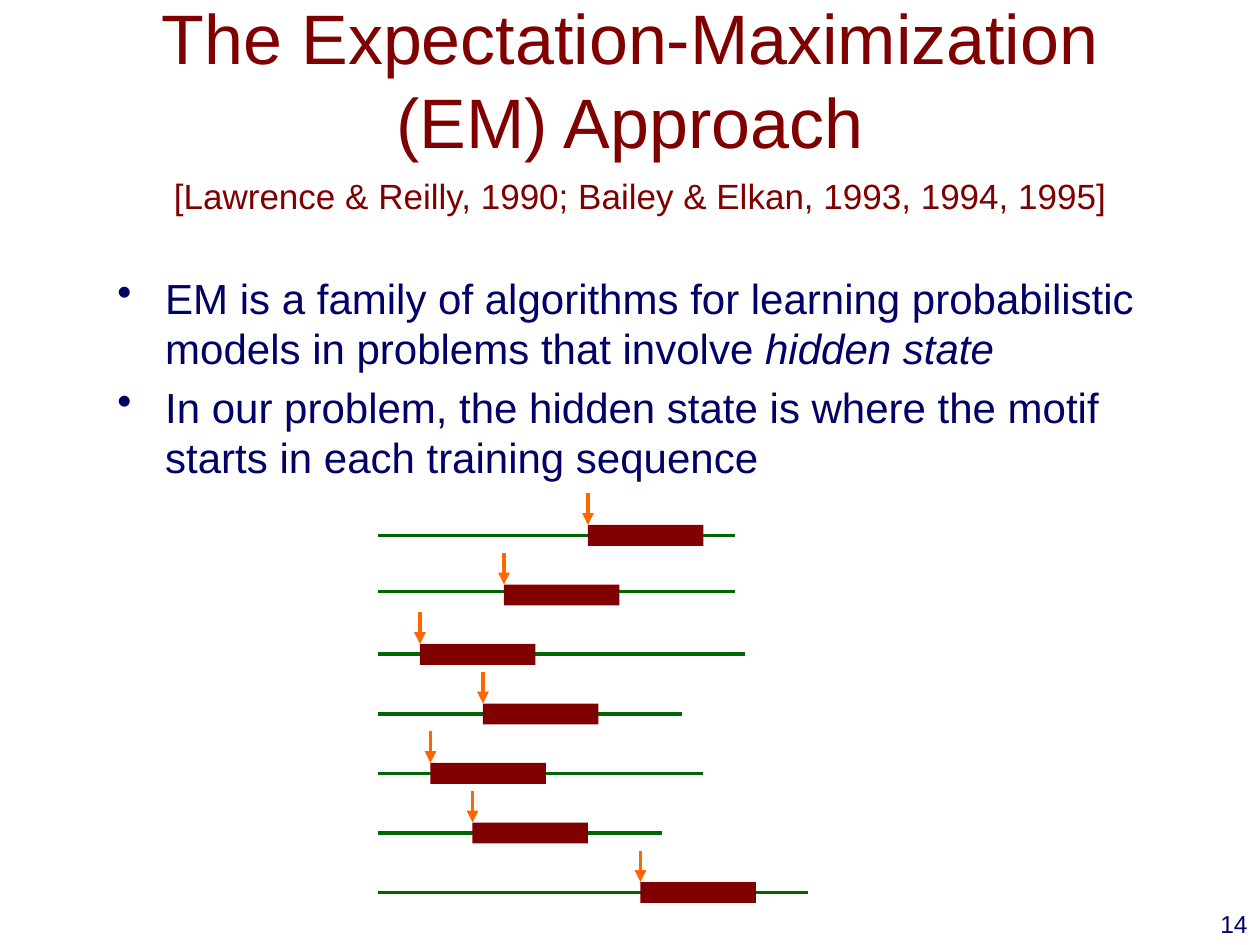
from lxml import etree
from pptx import Presentation
from pptx import util as u
from pptx.dml.color import RGBColor
from pptx.enum import shapes, text
from pptx.oxml.ns import qn

COLUMNS, ROWS = 120, 90
MAROON, NAVY, GREEN, ORANGE = "800000", "000066", "006600", "FF6600"


def color(value):
    """Turn a hex string into a colour."""
    return RGBColor.from_string(value)


class Canvas:
    """Draw styled elements on a slide whose grid step is 1/12 inch."""

    font = "Arial"
    stroke = u.Pt(2.25)

    def __init__(self, deck):
        """Add a blank slide to the deck."""
        self.slide = deck.slides.add_slide(deck.slide_layouts[6])
        self.step_x = deck.slide_width / COLUMNS
        self.step_y = deck.slide_height / ROWS

    def place(self, column, row):
        """Convert grid units to slide lengths."""
        return round(column * self.step_x), round(row * self.step_y)

    def frame(self, column, row, width, height, anchor=text.MSO_ANCHOR.TOP):
        """Add a wrapping text box and return its text frame."""
        box = self.slide.shapes.add_textbox(*self.place(column, row), *self.place(width, height))
        box.text_frame.word_wrap = True
        box.text_frame.vertical_anchor = anchor
        return box.text_frame

    def style(self, run, size, ink, italic=None):
        """Format one run."""
        run.font.name, run.font.size = self.font, u.Pt(size)
        run.font.italic = italic
        run.font.color.rgb = color(ink)

    def say(self, paragraph, words, size, ink, align=text.PP_ALIGN.LEFT, before=0):
        """Fill and format one paragraph."""
        paragraph.text = words
        paragraph.alignment = align
        paragraph.space_before = u.Pt(before)
        for run in paragraph.runs:
            self.style(run, size, ink)

    def indent(self, paragraph, bullet=False):
        """Give a paragraph a hanging indent and an optional bullet."""
        properties = paragraph._p.get_or_add_pPr()
        hang = u.Inches(0.38)
        properties.set("marL", str(hang))
        properties.set("indent", str(-hang))
        if bullet:
            etree.SubElement(properties, qn("a:buChar")).set("char", "•")

    def line(self, group, start, end, ink, arrow=False):
        """Add a straight line, with an arrowhead at its start if asked."""
        connector = group.shapes.add_connector(
            shapes.MSO_CONNECTOR.STRAIGHT, *self.place(*start), *self.place(*end))
        connector.line.color.rgb = color(ink)
        connector.line.width = self.stroke
        if arrow:
            outline = connector.line._get_or_add_ln()
            etree.SubElement(outline, qn("a:headEnd")).set("type", "triangle")
        etree.SubElement(connector._element.spPr, qn("a:effectLst"))

    def block(self, group, column, row, width, height, ink):
        """Add a filled rectangle without outline."""
        bar = group.shapes.add_shape(
            shapes.MSO_SHAPE.RECTANGLE, *self.place(column, row), *self.place(width, height))
        bar.shadow.inherit = False
        bar.fill.solid()
        bar.fill.fore_color.rgb = color(ink)
        bar.line.fill.background()

    def sequence(self, top, motif, end, axis=1):
        """Draw a training sequence with its motif and start arrow."""
        group = self.slide.shapes.add_group_shape()
        self.line(group, (36, top + axis), (end, top + axis), GREEN)
        self.block(group, motif, top, 11, 2, MAROON)
        self.line(group, (motif, top), (motif, top - 3), ORANGE, arrow=True)


def main():
    """Build and save the slide."""
    deck = Presentation()
    deck.slide_width, deck.slide_height = u.Inches(10), u.Inches(7.5)
    canvas = Canvas(deck)

    title = canvas.frame(9, 0, 102, 15, text.MSO_ANCHOR.MIDDLE)
    canvas.say(title.paragraphs[0], "The Expectation-Maximization (EM) Approach",
               40, MAROON, text.PP_ALIGN.CENTER)

    body = canvas.frame(10, 16, 102, 28)
    citation = body.paragraphs[0]
    canvas.say(citation, "[Lawrence & Reilly, 1990; Bailey & Elkan, 1993, 1994, 1995]",
               20, MAROON, text.PP_ALIGN.CENTER, before=4)
    canvas.indent(citation)

    family, problem = body.add_paragraph(), body.add_paragraph()
    canvas.say(family, "EM is a family of algorithms for learning probabilistic "
               "models in problems that involve ", 24, NAVY, before=32)
    canvas.say(problem, "In our problem, the hidden state is where the motif "
               "starts in each training sequence", 24, NAVY, before=4.8)
    for point in (family, problem):
        canvas.indent(point, bullet=True)
    term = family.add_run()
    term.text = "hidden state"
    canvas.style(term, 24, NAVY, italic=True)

    first_top, pitch = 50, 17 / 3
    sequences = [(56, 70), (48, 70, 0.67), (40, 71), (46, 65), (41, 67), (45, 63), (61, 77)]
    for index, sequence in enumerate(sequences):
        canvas.sequence(first_top + index * pitch, *sequence)

    number = canvas.frame(95, 86, 25, 6)
    canvas.say(number.paragraphs[0], "14", 14, NAVY, text.PP_ALIGN.RIGHT)

    deck.save("out.pptx")


if __name__ == "__main__":
    main()
